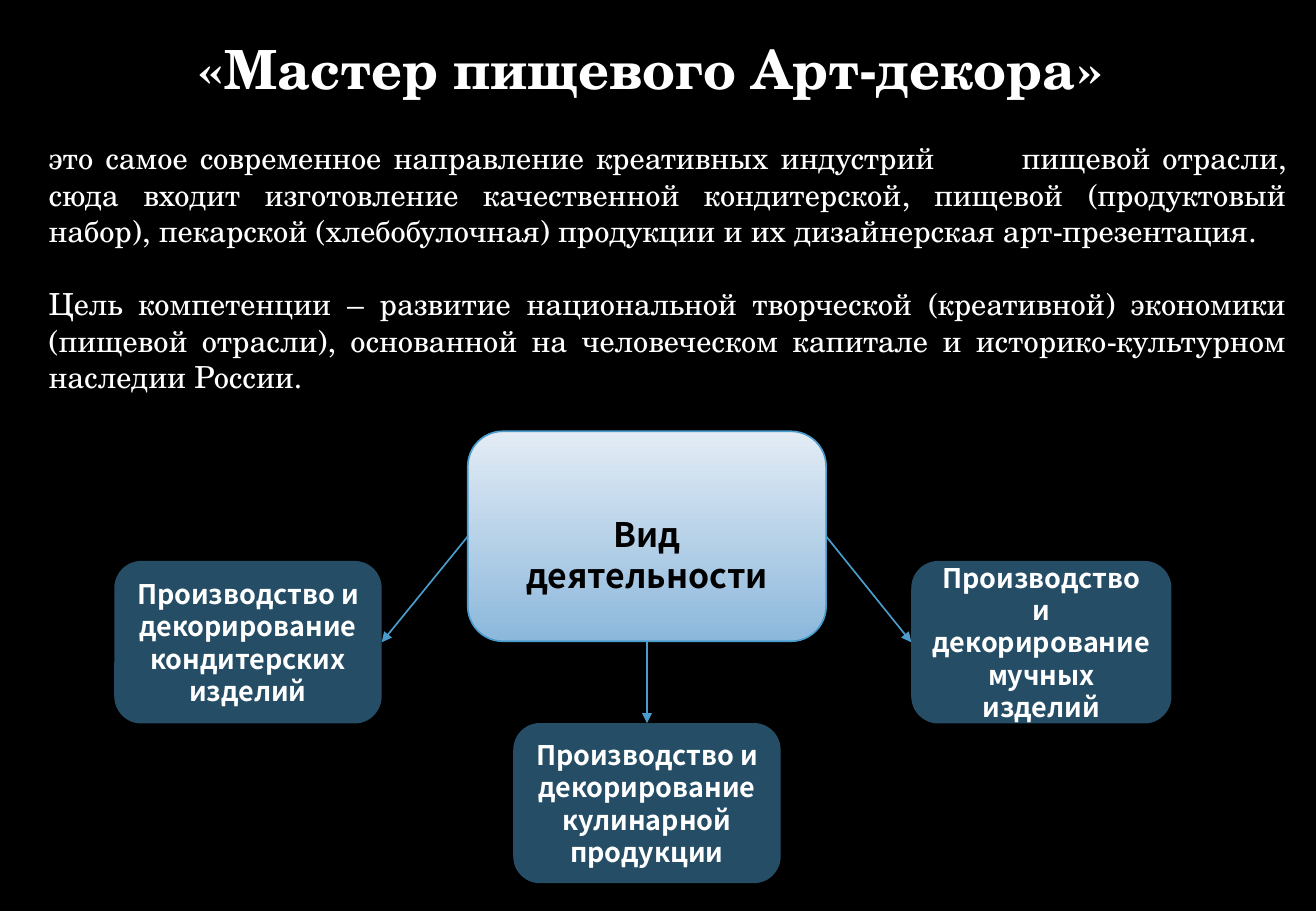
from dataclasses import dataclass

from lxml.etree import SubElement
from pptx import Presentation
from pptx.dml.color import RGBColor
from pptx.enum.shapes import MSO_CONNECTOR as Line, MSO_SHAPE as Shape
from pptx.enum.text import MSO_ANCHOR as Anchor, MSO_AUTO_SIZE as AutoSize, PP_ALIGN as Align
from pptx.oxml.ns import qn
from pptx.util import Cm, Pt


@dataclass(frozen=True)
class Theme:
    background: RGBColor = RGBColor.from_string("000000")
    light: RGBColor = RGBColor.from_string("FFFFFF")
    dark: RGBColor = RGBColor.from_string("000000")
    accent: RGBColor = RGBColor.from_string("4A9CCC")
    gradient: tuple = (RGBColor.from_string("E3ECF5"), RGBColor.from_string("8CB8DC"))
    serif: str = "TeX Gyre Schola"
    sans: str = "Noto Sans CJK SC"
    title: int = 32
    body: int = 18
    hub: int = 20
    branch: int = 16


T = Theme()
LEFT, TOP, RIGHT, BOTTOM = 1, 0, 3, 2  # connection sites of a rounded rectangle

TITLE = "«Мастер пищевого Арт-декора»"
BODY = [
    ["это самое современное направление креативных индустрий", " ",
     "пищевой отрасли, сюда входит изготовление качественной кондитерской, пищевой "
     "(продуктовый набор), пекарской (хлебобулочная) продукции и их дизайнерская "
     "арт-презентация."],
    ["Цель компетенции – развитие национальной творческой (креативной) экономики "
     "(пищевой отрасли), основанной на человеческом капитале и "
     "историко-культурном наследии России."],
]
HUB = "Вид деятельности"
# text, box relative to the diagram, site on the hub, site on the branch
BRANCHES = [
    ("Производство и декорирование кондитерских изделий", (0, 2.71, 5.59, 3.4), LEFT, RIGHT),
    ("Производство и декорирование кулинарной продукции", (8.34, 6.1, 5.59, 3.35), BOTTOM, TOP),
    ("Производство и декорирование мучных изделий", (16.66, 2.71, 5.44, 3.4), RIGHT, LEFT),
]


def set_all(obj, values):
    for name, value in values.items():
        setattr(obj, name, value)


def place(shape, box):
    set_all(shape, dict(zip(("left", "top", "width", "height"), map(Cm, box))))


def style_runs(p, font, size, color, bold=False):
    for r in p.runs:
        set_all(r.font, {"name": font, "size": Pt(size), "bold": bold})
        r.font.color.rgb = color


def add_title(s, box):
    sp = s.shapes.title
    place(sp, box)
    tf = sp.text_frame
    set_all(tf, {"text": TITLE, "word_wrap": True, "auto_size": AutoSize.NONE,
                 "vertical_anchor": Anchor.TOP})
    p = tf.paragraphs[0]
    p.alignment = Align.CENTER
    style_runs(p, T.serif, T.title, T.light, True)


def add_body(s, box):
    sp = s.placeholders[1]
    place(sp, box)
    tf = sp.text_frame
    set_all(tf, {"word_wrap": True, "auto_size": AutoSize.NONE, "vertical_anchor": Anchor.TOP})
    for i, parts in enumerate(BODY):
        p = tf.add_paragraph() if i else tf.paragraphs[0]
        set_all(p, {"alignment": Align.JUSTIFY, "space_before": Pt(T.body * 1.2 * i)})
        pPr = p._p.get_or_add_pPr()
        pPr.set("marL", "0")
        pPr.set("indent", "0")
        SubElement(pPr, qn("a:buNone"))
        for part in parts:
            r = p.add_run()
            r.text = part
            if part == " ":
                r._r.get_or_add_rPr().set("spc", "4400")  # one wide gap
        style_runs(p, T.serif, T.body, T.light)


def add_box(s, text, box, size, color, anchor):
    sp = s.shapes.add_shape(Shape.ROUNDED_RECTANGLE, *map(Cm, box))
    sp.shadow.inherit = False
    tf = sp.text_frame
    set_all(tf, {"text": text, "word_wrap": True, "vertical_anchor": anchor})
    p = tf.paragraphs[0]
    set_all(p, {"alignment": Align.CENTER, "line_spacing": Pt(size * 1.2)})
    style_runs(p, T.sans, size, color, True)
    return sp


def add_hub(s, box):
    sp = add_box(s, HUB, box, T.hub, T.dark, Anchor.TOP)
    sp.text_frame.margin_top = Cm(1.51)
    sp.fill.gradient()
    sp.fill.gradient_angle = 270
    for stop, color in zip(sp.fill.gradient_stops, T.gradient):
        stop.color.rgb = color
    sp.line.color.rgb = T.accent
    sp.line.width = Pt(1)
    return sp


def add_branch(s, text, box):
    sp = add_box(s, text, box, T.branch, T.light, Anchor.MIDDLE)
    sp.fill.solid()
    sp.fill.fore_color.rgb = T.accent
    color = sp.fill._xPr.find(qn("a:solidFill"))[0]
    SubElement(color, qn("a:alpha"), val="50000")
    sp.line.fill.background()
    return sp


def add_arrow(s, start, start_site, end, end_site):
    c = s.shapes.add_connector(Line.STRAIGHT, 0, 0, 0, 0)
    c.begin_connect(start, start_site)
    c.end_connect(end, end_site)
    c.line.color.rgb = T.accent
    c.line.width = Pt(1)
    SubElement(c.line._get_or_add_ln(), qn("a:tailEnd"), type="triangle")
    SubElement(c._element.spPr, qn("a:effectLst"))


def add_diagram(s, x, y):
    """Draw the hub with its three branches, measured from the top left corner."""
    hub = add_hub(s, (x + 7.39, y, 7.49, 4.39))
    for text, (dx, dy, w, h), hub_site, branch_site in BRANCHES:
        branch = add_branch(s, text, (x + dx, y + dy, w, h))
        add_arrow(s, hub, hub_site, branch, branch_site)


def main():
    prs = Presentation()
    set_all(prs, {"slide_width": Cm(27.51), "slide_height": Cm(19.05)})
    s = prs.slides.add_slide(prs.slide_layouts[1])
    s.background.fill.solid()
    s.background.fill.fore_color.rgb = T.background
    add_title(s, (0.6, 0.61, 26, 1.63))
    add_body(s, (0.76, 2.79, 26.39, 5.64))
    add_diagram(s, 2.39, 9.02)
    prs.save("out.pptx")


if __name__ == "__main__":
    main()
